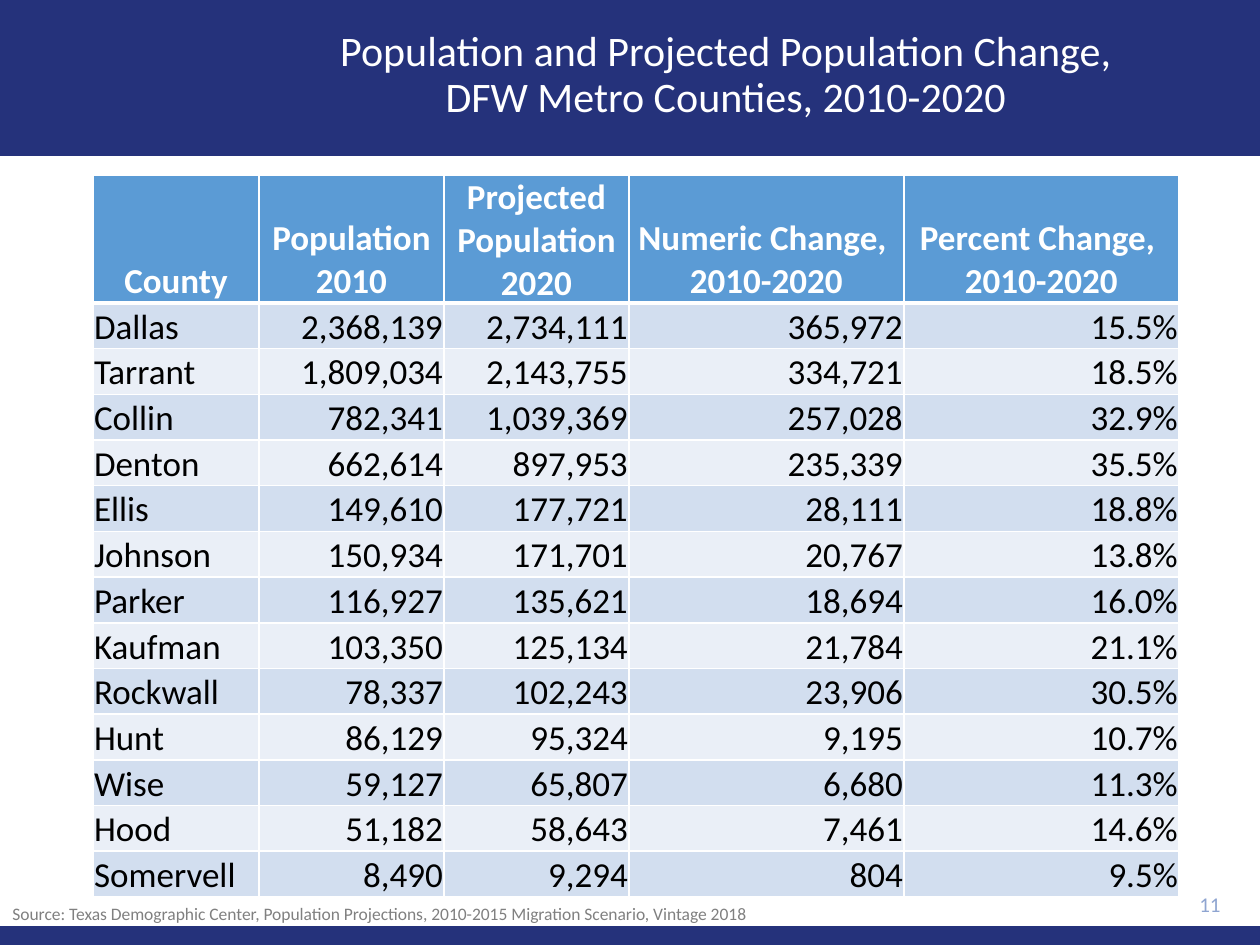
from lxml import etree
from pptx import Presentation
from pptx.dml.color import RGBColor
from pptx.enum.shapes import MSO_SHAPE
from pptx.enum.text import MSO_ANCHOR, PP_ALIGN
from pptx.oxml.ns import qn
from pptx.util import Emu, Pt

RECTANGLE = MSO_SHAPE.RECTANGLE
LEFT, CENTER, RIGHT = PP_ALIGN.LEFT, PP_ALIGN.CENTER, PP_ALIGN.RIGHT
TOP, MIDDLE, BOTTOM = MSO_ANCHOR.TOP, MSO_ANCHOR.MIDDLE, MSO_ANCHOR.BOTTOM

NAVY = RGBColor(0x25, 0x32, 0x7B)
BLUE = RGBColor(0x5B, 0x9B, 0xD5)
BAND_DARK = RGBColor(0xD2, 0xDE, 0xEF)
BAND_LIGHT = RGBColor(0xEA, 0xEF, 0xF7)
PERIWINKLE = RGBColor(0x8F, 0xA5, 0xD1)
GRAY = RGBColor(0x80, 0x80, 0x80)
WHITE = RGBColor(0xFF, 0xFF, 0xFF)
BLACK = RGBColor(0x00, 0x00, 0x00)

PX_PER_INCH = 126
SLIDE_WIDTH, SLIDE_HEIGHT = 1260, 945
COLUMN_WIDTHS = [166, 185, 185, 275, 275]
HEADER_HEIGHT, BODY_HEIGHT = 128, 594

HEADERS = [
    "County",
    "Population 2010",
    "Projected Population 2020",
    "Numeric Change, \n2010-2020",
    "Percent Change, \n2010-2020",
]
COUNTIES = [
    ("Dallas", "2,368,139", "2,734,111", "365,972", "15.5%"),
    ("Tarrant", "1,809,034", "2,143,755", "334,721", "18.5%"),
    ("Collin", "782,341", "1,039,369", "257,028", "32.9%"),
    ("Denton", "662,614", "897,953", "235,339", "35.5%"),
    ("Ellis", "149,610", "177,721", "28,111", "18.8%"),
    ("Johnson", "150,934", "171,701", "20,767", "13.8%"),
    ("Parker", "116,927", "135,621", "18,694", "16.0%"),
    ("Kaufman", "103,350", "125,134", "21,784", "21.1%"),
    ("Rockwall", "78,337", "102,243", "23,906", "30.5%"),
    ("Hunt", "86,129", "95,324", "9,195", "10.7%"),
    ("Wise", "59,127", "65,807", "6,680", "11.3%"),
    ("Hood", "51,182", "58,643", "7,461", "14.6%"),
    ("Somervell", "8,490", "9,294", "804", "9.5%"),
]


def px(length):
    return Emu(round(length * 914400 / PX_PER_INCH))


def set_values(target, values):
    for name, value in values.items():
        setattr(target, name, value)


class SlideBuilder:
    """Holds the text style and the slide being drawn."""

    font_name = "Calibri"

    def __init__(self, slide):
        self.slide = slide

    def fill_text(self, frame, text, size, color, align=LEFT, bold=False, spacing=None):
        frame.text = text
        for para in frame.paragraphs:
            set_values(para, {"alignment": align, "line_spacing": spacing})
            for span in para.runs:
                set_values(span.font, {"name": self.font_name, "size": Pt(size), "bold": bold})
                span.font.color.rgb = color

    def bar(self, left, top, width, height):
        box = self.slide.shapes.add_shape(RECTANGLE, px(left), px(top), px(width), px(height))
        box.shadow.inherit = False
        box.fill.solid()
        box.fill.fore_color.rgb = NAVY
        box.line.fill.background()

    def text(self, left, top, width, height, text, anchor=MIDDLE, wrap=True, **style):
        box = self.slide.shapes.add_textbox(px(left), px(top), px(width), px(height))
        set_values(box.text_frame, {"word_wrap": wrap, "vertical_anchor": anchor})
        self.fill_text(box.text_frame, text, **style)

    def borders(self, cell, widths):
        """Draw white cell edges; widths maps each edge letter to points."""
        properties = cell._tc.get_or_add_tcPr()
        for edge, width in widths.items():
            line = etree.SubElement(properties, qn(f"a:ln{edge}"), w=str(Pt(width)))
            fill = etree.SubElement(line, qn("a:solidFill"))
            etree.SubElement(fill, qn("a:srgbClr"), val=str(WHITE))

    def cell(self, cell, text, fill, edges, **style):
        set_values(cell, {
            "vertical_anchor": BOTTOM,
            "margin_left": px(1),
            "margin_right": px(1),
            "margin_top": px(1),
            "margin_bottom": 0,
        })
        self.borders(cell, edges)
        cell.fill.solid()
        cell.fill.fore_color.rgb = fill
        self.fill_text(cell.text_frame, text, size=20, **style)

    def table(self, left, top):
        count = len(COUNTIES)
        table = self.slide.shapes.add_table(
            count + 1, len(HEADERS), px(left), px(top),
            px(sum(COLUMN_WIDTHS)), px(HEADER_HEIGHT + BODY_HEIGHT),
        ).table
        for column, width in zip(table.columns, COLUMN_WIDTHS):
            column.width = px(width)
        for row in table.rows:
            row.height = px(BODY_HEIGHT / count)
        table.rows[0].height = px(HEADER_HEIGHT)

        for column, heading in enumerate(HEADERS):
            self.cell(table.cell(0, column), heading, BLUE, {"L": 1, "R": 1, "T": 1, "B": 3},
                      color=WHITE, align=CENTER, bold=True)
        for row, values in enumerate(COUNTIES, start=1):
            band = BAND_DARK if row % 2 else BAND_LIGHT
            edges = {"L": 1, "R": 1, "T": 3 if row == 1 else 1, "B": 1}
            for column, value in enumerate(values):
                self.cell(table.cell(row, column), value, band, edges,
                          color=BLACK, align=RIGHT if column else LEFT)


def main():
    deck = Presentation()
    set_values(deck, {"slide_width": px(SLIDE_WIDTH), "slide_height": px(SLIDE_HEIGHT)})
    page = SlideBuilder(deck.slides.add_slide(deck.slide_layouts[6]))

    page.bar(0, 0, SLIDE_WIDTH, 156)
    page.bar(0, 926, SLIDE_WIDTH, 19)
    page.text(214, 13, 1033, 126,
              "Population and Projected Population Change, \vDFW Metro Counties, 2010-2020 ",
              size=24, color=WHITE, align=CENTER, spacing=0.9)
    page.table(93, 175)
    page.text(1121, 883, 112, 43, "11", size=12, color=PERIWINKLE, align=RIGHT)
    page.text(0, 897, 776, 34,
              "Source: Texas Demographic Center, Population Projections, "
              "2010-2015 Migration Scenario, Vintage 2018",
              anchor=TOP, wrap=False, size=10, color=GRAY)
    deck.save("out.pptx")


if __name__ == "__main__":
    main()
